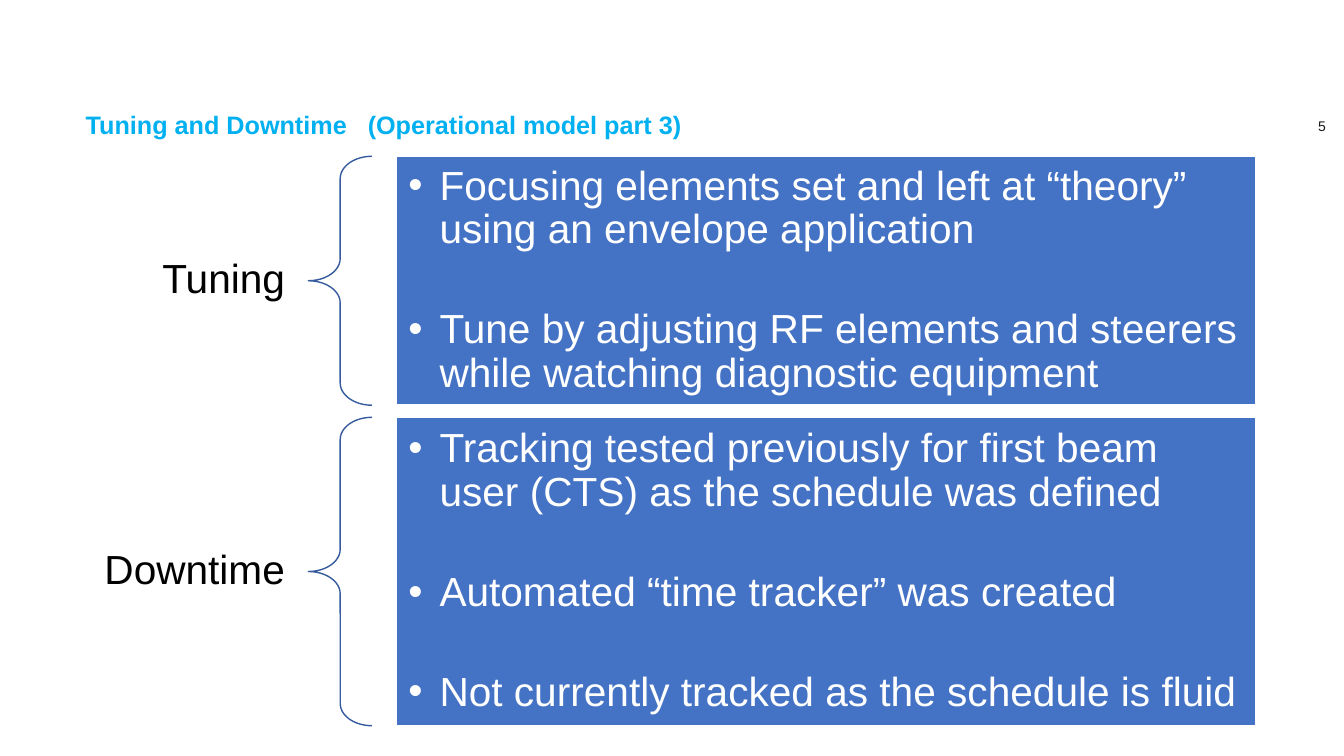
import dataclasses

import lxml.etree
import pptx
import pptx.dml.color
import pptx.enum.shapes
import pptx.enum.text
import pptx.oxml.ns
import pptx.util

ALIGN = pptx.enum.text.PP_ALIGN
ANCHOR = pptx.enum.text.MSO_ANCHOR
SHAPE = pptx.enum.shapes.MSO_SHAPE


@dataclasses.dataclass(frozen=True)
class Theme:
    font: str = "Arial"
    accent: str = "00B0F0"
    panel: str = "4472C4"
    brace: str = "365B9D"
    light: str = "FFFFFF"
    dark: str = "000000"
    number: str = "181717"
    title_size: int = 18
    body_size: int = 29
    number_size: int = 10
    bullet_gap: int = 40


def color(value):
    return pptx.dml.color.RGBColor.from_string(value)


def add_bullet(para, indent):
    """Give the paragraph a hanging bullet; indent is in inches."""
    properties = para._p.get_or_add_pPr()
    hang = pptx.util.Inches(indent)
    properties.set("marL", str(hang))
    properties.set("indent", str(-hang))
    for tag, name, value in (("a:buFont", "typeface", "Arial"), ("a:buChar", "char", "•")):
        mark = lxml.etree.SubElement(properties, pptx.oxml.ns.qn(tag))
        mark.set(name, value)


class SlideBuilder:
    """Places elements on one page; lengths are percentages of its width and height."""

    def __init__(self, deck, theme):
        self.deck = deck
        self.theme = theme
        self.page = deck.slides.add_slide(deck.slide_layouts[5])

    def area(self, left, top, width, height):
        wide, high = self.deck.slide_width, self.deck.slide_height
        shares = ((left, wide), (top, high), (width, wide), (height, high))
        return [round(share * full / 100) for share, full in shares]

    def fill_text(self, box, lines, size, ink, bold=False, align=ALIGN.LEFT,
                  anchor=ANCHOR.MIDDLE, insets=(0.1, 0.05, 0.1, 0.05), spacing=0.9,
                  bullet_indent=None, gap=0):
        """Fill the box with one paragraph per line; insets are in inches."""
        frame = box.text_frame
        frame.word_wrap = True
        frame.auto_size = pptx.enum.text.MSO_AUTO_SIZE.NONE
        frame.vertical_anchor = anchor
        (frame.margin_left, frame.margin_top,
         frame.margin_right, frame.margin_bottom) = map(pptx.util.Inches, insets)
        for index, line in enumerate(lines):
            para = frame.add_paragraph() if index else frame.paragraphs[0]
            para.alignment = align
            para.line_spacing = spacing
            para.space_before = pptx.util.Pt(gap if index else 0)
            para.space_after = pptx.util.Pt(0)
            if bullet_indent:
                add_bullet(para, bullet_indent)
            span = para.add_run()
            span.text = line
            span.font.name = self.theme.font
            span.font.size = pptx.util.Pt(size)
            span.font.bold = bold
            span.font.color.rgb = color(ink)

    def title(self, text, *place):
        box = self.page.shapes.title
        box.left, box.top, box.width, box.height = self.area(*place)
        self.fill_text(box, [text], self.theme.title_size, self.theme.accent,
                       bold=True, anchor=ANCHOR.TOP)

    def text(self, text, place, size, ink, **style):
        box = self.page.shapes.add_textbox(*self.area(*place))
        self.fill_text(box, [text], size, ink, **style)

    def shape(self, kind, place, line, fill=None):
        shape = self.page.shapes.add_shape(kind, *self.area(*place))
        shape.shadow.inherit = False
        shape.line.color.rgb = color(line)
        shape.line.width = pptx.util.Pt(1)
        if fill:
            shape.fill.solid()
            shape.fill.fore_color.rgb = color(fill)
        else:
            shape.fill.background()
        return shape

    def topic(self, label, bullets, top, height):
        """Draw a label, a brace and a panel of bullets side by side."""
        theme = self.theme
        label_height = 8.4
        label_top = top + (height - label_height) / 2
        self.text(label, (-0.53, label_top, 23.48, label_height), theme.body_size,
                  theme.dark, align=ALIGN.RIGHT, insets=(0.23, 0.08, 0.23, 0.08))
        brace = self.shape(SHAPE.LEFT_BRACE, (22.95, top, 4.73, height), theme.brace)
        brace.adjustments[0] = 0.35
        brace.adjustments[1] = 0.5
        panel = self.shape(SHAPE.RECTANGLE, (29.48, top, 63.92, height),
                           theme.light, theme.panel)
        self.fill_text(panel, bullets, theme.body_size, theme.light, insets=(0.12,) * 4,
                       bullet_indent=0.31, gap=theme.bullet_gap)


TOPICS = (
    ("Tuning", 32.93, (
        "Focusing elements set and left at “theory” using an envelope application",
        "Tune by adjusting RF elements and steerers while watching diagnostic equipment",
    )),
    ("Downtime", 40.8, (
        "Tracking tested previously for first beam user (CTS) as the schedule was defined",
        "Automated “time tracker” was created",
        "Not currently tracked as the schedule is fluid",
    )),
)


def main():
    deck = pptx.Presentation()
    deck.slide_width = pptx.util.Inches(13.33)
    deck.slide_height = pptx.util.Inches(7.5)
    theme = Theme()
    builder = SlideBuilder(deck, theme)
    builder.title("Tuning and Downtime   (Operational model part 3)", 5.63, 14.27, 73.44, 7.47)
    builder.text("5", (93.77, 14.27, 5.25, 4.67), theme.number_size, theme.number,
                 align=ALIGN.RIGHT, insets=(0.1, 0.05, 0.05, 0.05), spacing=1.0)
    top, gap = 20.67, 1.6
    for label, height, bullets in TOPICS:
        builder.topic(label, bullets, top, height)
        top += height + gap
    deck.save("out.pptx")


if __name__ == "__main__":
    main()
